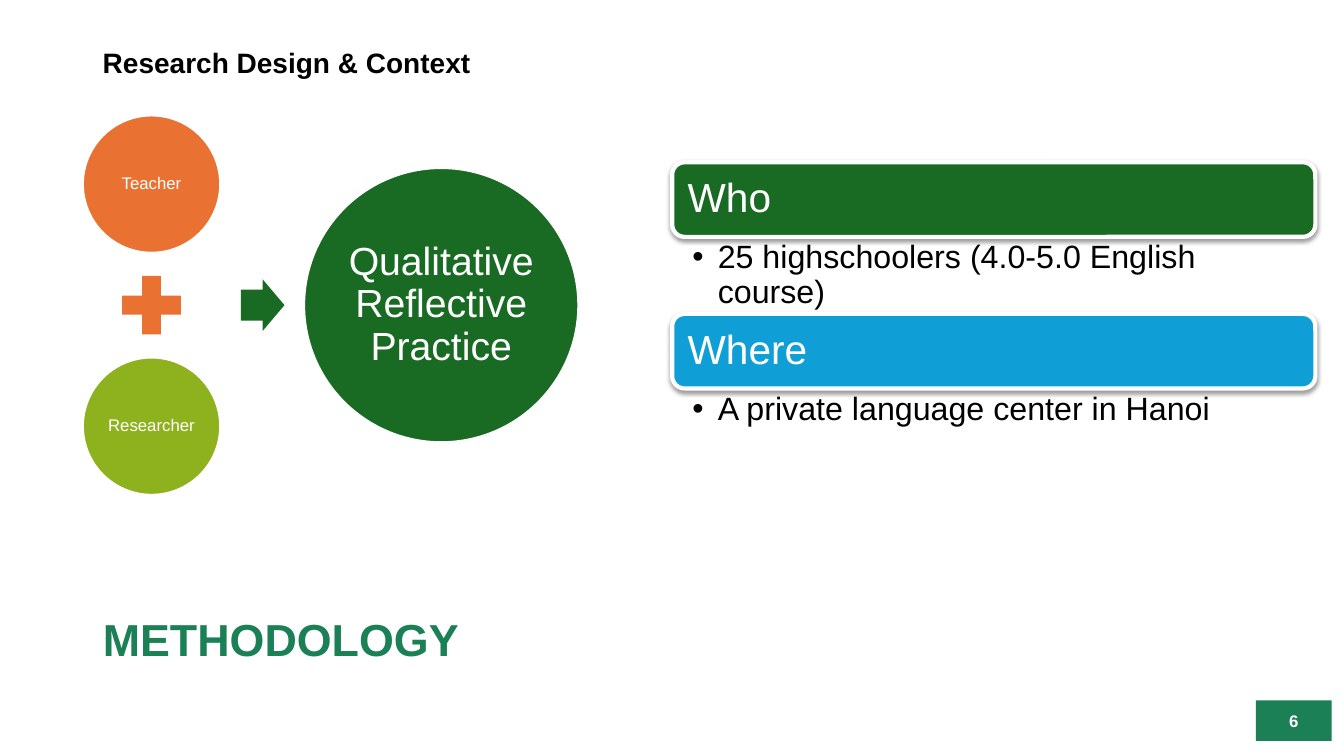
from dataclasses import dataclass

from lxml.etree import SubElement
from pptx import Presentation
from pptx.dml.color import RGBColor
from pptx.enum.shapes import MSO_SHAPE
from pptx.enum.text import MSO_ANCHOR, MSO_AUTO_SIZE, PP_ALIGN
from pptx.oxml.ns import qn
from pptx.shapes.autoshape import Shape
from pptx.slide import Slide
from pptx.text.text import TextFrame
from pptx.util import Cm, Pt

COLORS = {
    "black": "000000",
    "white": "FFFFFF",
    "brand": "1B8056",
    "orange": "E97132",
    "lime": "8EB21E",
    "forest": "196B24",
    "sky": "0F9ED5",
}

ROLE_X = 3.82
FLOW_Y = 7.69
ROLE_OFFSET = 3.05
CARD_LEFT, CARD_TOP = 16.94, 4.09
CARD_WIDTH, CARD_HEIGHT = 16.21, 1.88
CARD_STEP = 3.82


@dataclass
class FlowPart:
    kind: MSO_SHAPE
    center_x: float
    center_y: float
    width: float
    height: float
    color: str
    label: str = ""
    size: float = 12
    inset: float = 0.05


@dataclass
class Card:
    heading: str
    detail: str
    color: str
    detail_height: float


FLOW = [
    FlowPart(MSO_SHAPE.OVAL, ROLE_X, FLOW_Y - ROLE_OFFSET, 3.48, 3.48, "orange", "Teacher"),
    FlowPart(MSO_SHAPE.MATH_PLUS, ROLE_X, FLOW_Y, 2.01, 2.01, "orange"),
    FlowPart(MSO_SHAPE.OVAL, ROLE_X, FLOW_Y + ROLE_OFFSET, 3.48, 3.48, "lime", "Researcher"),
    FlowPart(MSO_SHAPE.RIGHT_ARROW, 6.62, FLOW_Y, 1.1, 1.3, "forest"),
    FlowPart(MSO_SHAPE.OVAL, 11.12, FLOW_Y, 6.93, 6.93, "forest",
             "Qualitative Reflective Practice", 28, 0.1),
]

CARDS = [
    Card("Who", "25 highschoolers (4.0-5.0 English course)", "forest", 1.9),
    Card("Where", "A private language center in Hanoi", "sky", 1.35),
]


def rgb(color: str) -> RGBColor:
    return RGBColor.from_string(COLORS[color])


def write(frame: TextFrame, text: str, size: float, color: str, align: PP_ALIGN,
          insets: tuple[float, float, float, float], anchor: MSO_ANCHOR = MSO_ANCHOR.MIDDLE,
          bold: bool = False, spacing: float = 0.9) -> None:
    frame.word_wrap = True
    frame.auto_size = MSO_AUTO_SIZE.NONE
    frame.vertical_anchor = anchor
    frame.margin_left, frame.margin_top, frame.margin_right, frame.margin_bottom = map(Cm, insets)
    paragraph = frame.paragraphs[0]
    paragraph.text = text
    paragraph.alignment = align
    paragraph.line_spacing = spacing
    paragraph.space_before = Pt(0)
    font = paragraph.font
    font.name = "Arial"
    font.size = Pt(size)
    font.bold = bold
    font.color.rgb = rgb(color)


def add_block(slide: Slide, kind: MSO_SHAPE, left: float, top: float, width: float,
              height: float, color: str, outline: float = 0) -> Shape:
    block = slide.shapes.add_shape(kind, Cm(left), Cm(top), Cm(width), Cm(height))
    block.shadow.inherit = False
    block.fill.solid()
    block.fill.fore_color.rgb = rgb(color)
    if outline:
        block.line.color.rgb = rgb("white")
        block.line.width = Pt(outline)
    else:
        block.line.fill.background()
    return block


def add_flow_part(slide: Slide, part: FlowPart) -> None:
    block = add_block(slide, part.kind, part.center_x - part.width / 2,
                      part.center_y - part.height / 2, part.width, part.height,
                      part.color, 2 if part.label else 0)
    if part.kind == MSO_SHAPE.RIGHT_ARROW:
        block.adjustments[0] = 0.6
    if part.label:
        write(block.text_frame, part.label, part.size, "white", PP_ALIGN.CENTER,
              (part.inset,) * 4)


def add_soft_shadow(block: Shape) -> None:
    effects = block._element.spPr.find(qn("a:effectLst"))
    shadow = SubElement(effects, qn("a:outerShdw"), blurRad="40000", dist="20000",
                        dir="5400000", rotWithShape="0")
    tint = SubElement(shadow, qn("a:srgbClr"), val=COLORS["black"])
    SubElement(tint, qn("a:alpha"), val="38000")


def add_bullet(frame: TextFrame) -> None:
    properties = frame.paragraphs[0]._p.get_or_add_pPr()
    indent = Cm(0.64)
    properties.set("marL", str(indent))
    properties.set("indent", str(-indent))
    bullet_color = SubElement(properties, qn("a:buClr"))
    SubElement(bullet_color, qn("a:srgbClr"), val=COLORS["black"])
    SubElement(properties, qn("a:buFont"), typeface="Arial")
    SubElement(properties, qn("a:buChar"), char="•")


def add_card(slide: Slide, card: Card, top: float) -> None:
    banner = add_block(slide, MSO_SHAPE.ROUNDED_RECTANGLE, CARD_LEFT, top,
                       CARD_WIDTH, CARD_HEIGHT, card.color, 3)
    add_soft_shadow(banner)
    write(banner.text_frame, card.heading, 29, "white", PP_ALIGN.LEFT, (0.3,) * 4)
    detail = slide.shapes.add_textbox(Cm(CARD_LEFT), Cm(top + CARD_HEIGHT),
                                      Cm(CARD_WIDTH), Cm(card.detail_height)).text_frame
    add_bullet(detail)
    write(detail, card.detail, 23, "black", PP_ALIGN.LEFT, (0.51, 0.1, 0.58, 0.1),
          MSO_ANCHOR.TOP)


def main() -> None:
    deck = Presentation()
    deck.slide_width, deck.slide_height = Cm(33.87), Cm(19.05)
    slide = deck.slides.add_slide(deck.slide_layouts[5])
    margins = (0.25, 0.13, 0.25, 0.13)

    title = slide.shapes.title
    title.left, title.top, title.width, title.height = Cm(2.34), Cm(14.2), Cm(29.21), Cm(3.96)
    write(title.text_frame, "METHODOLOGY", 32, "brand", PP_ALIGN.JUSTIFY, margins, bold=True)

    subtitle = slide.shapes.add_textbox(Cm(2.34), Cm(1.02), Cm(29.21), Cm(13.18))
    write(subtitle.text_frame, "Research Design & Context", 20, "black", PP_ALIGN.JUSTIFY,
          margins, MSO_ANCHOR.TOP, bold=True, spacing=1.0)

    page_badge = add_block(slide, MSO_SHAPE.RECTANGLE, 31.65, 17.65, 1.91, 1.02, "brand")
    write(page_badge.text_frame, "6", 12, "white", PP_ALIGN.CENTER, margins, bold=True,
          spacing=1.0)

    for part in FLOW:
        add_flow_part(slide, part)
    for row, card in enumerate(CARDS):
        add_card(slide, card, CARD_TOP + row * CARD_STEP)

    deck.save("out.pptx")


if __name__ == "__main__":
    main()
